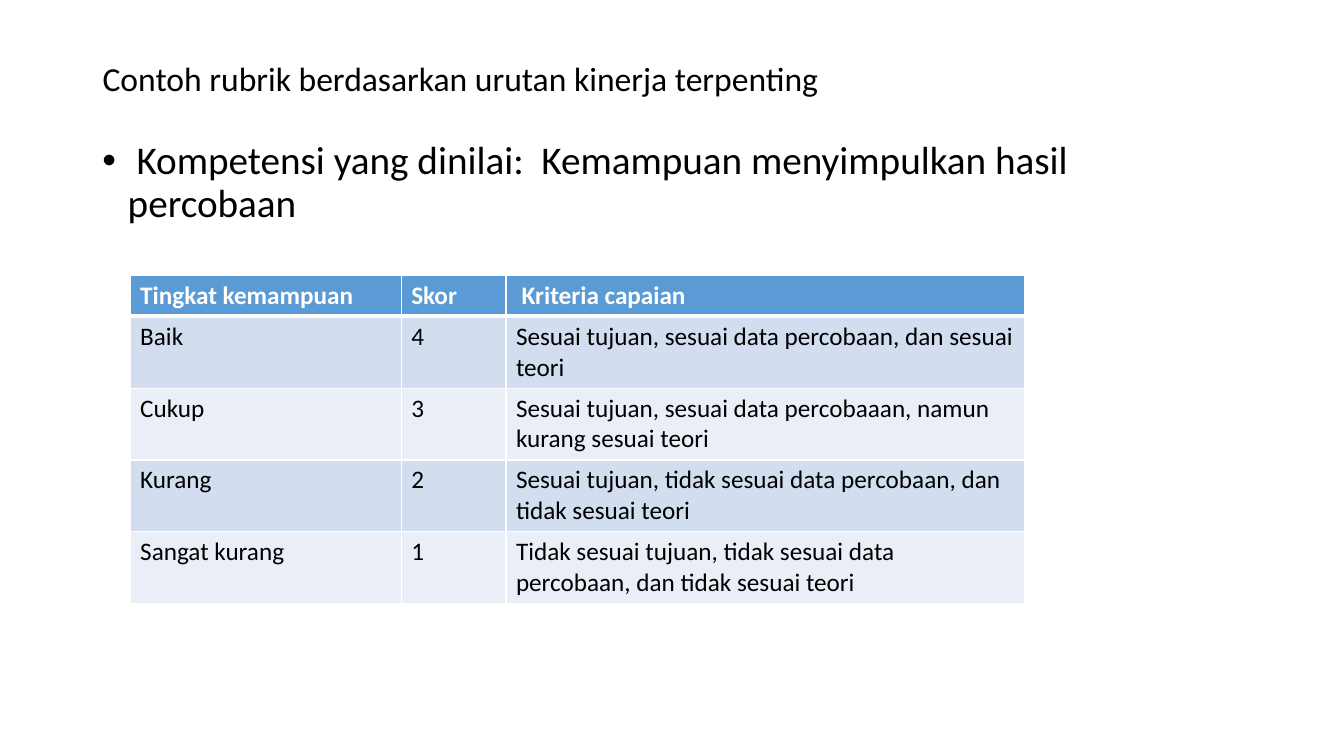
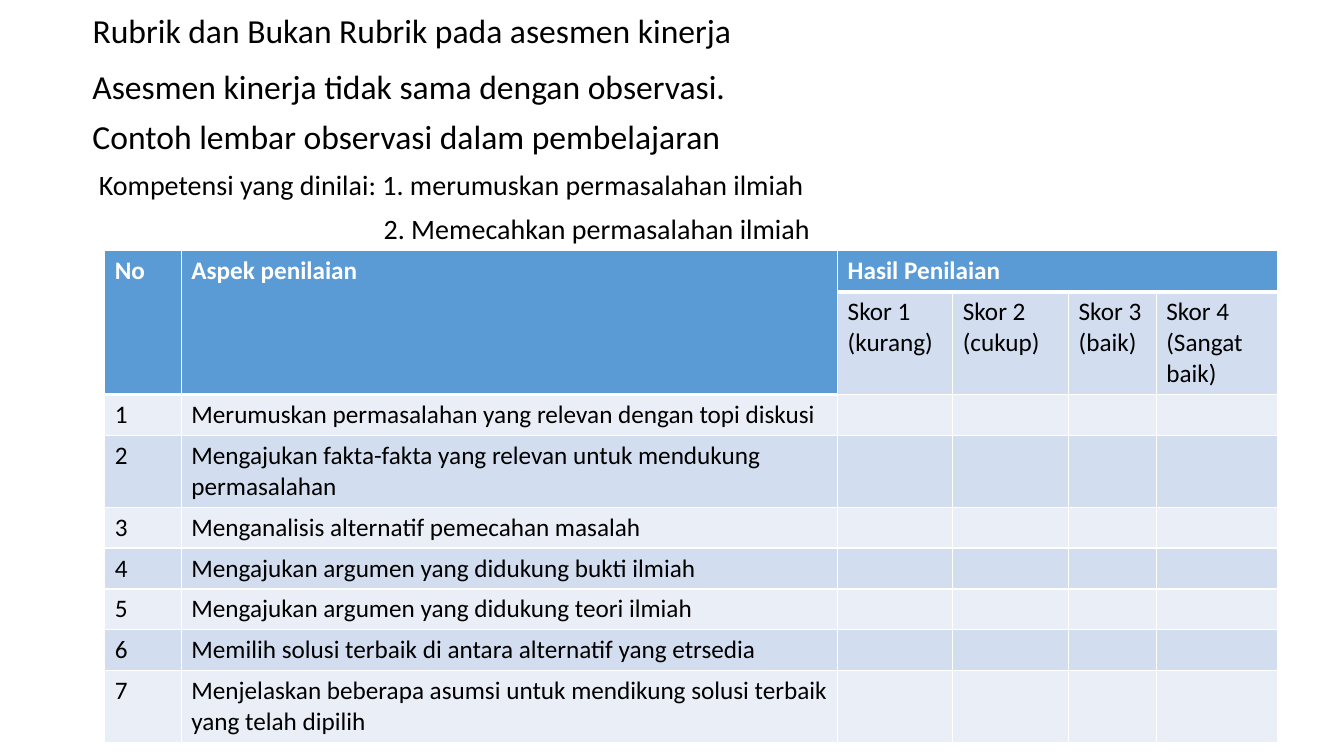
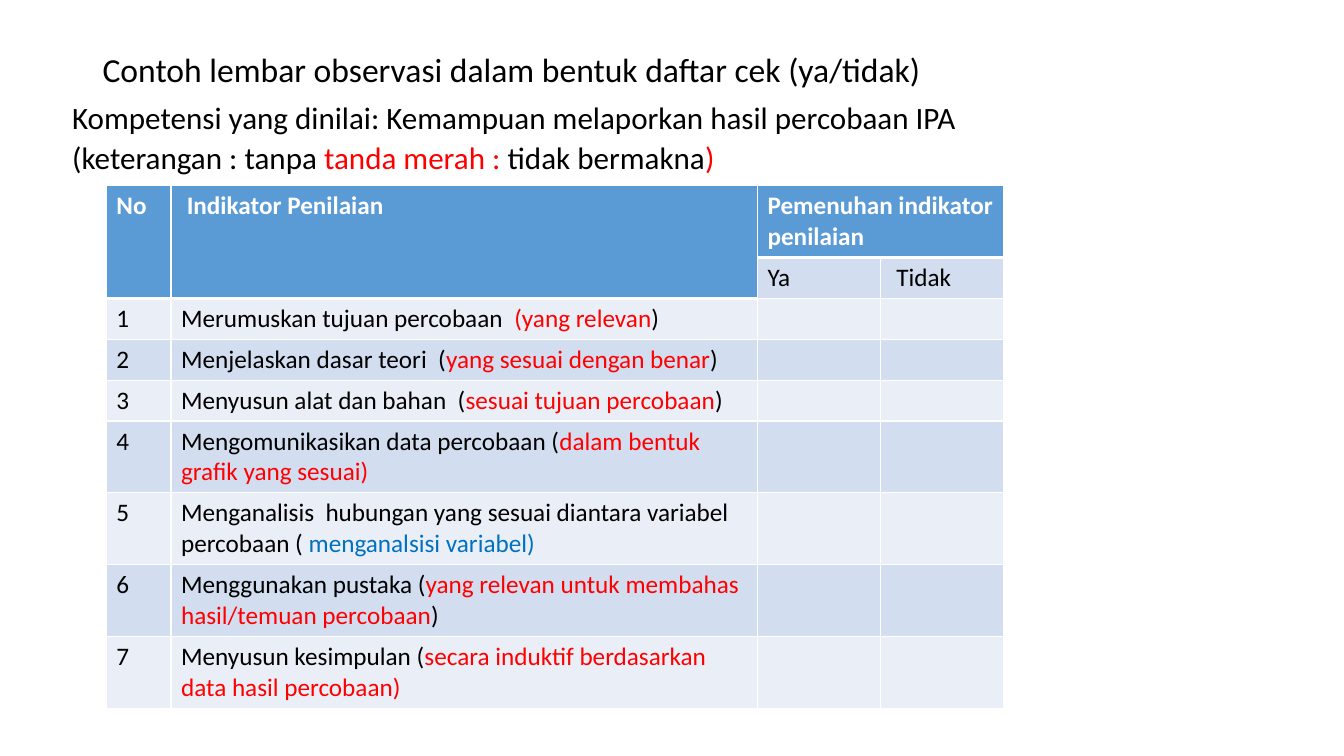
from lxml import etree
from pptx import Presentation
from pptx.dml.color import RGBColor
from pptx.enum.text import MSO_ANCHOR, MSO_AUTO_SIZE, PP_ALIGN
from pptx.oxml.ns import qn
from pptx.util import Cm, Pt

MIDDLE = MSO_ANCHOR.MIDDLE
FIXED = MSO_AUTO_SIZE.NONE
LEFT = PP_ALIGN.LEFT

FONT = "Calibri"
INK = {
    "text": "000000", "white": "FFFFFF", "head": "5B9BD5",
    "dark": "D2DEEF", "light": "EAEFF7", "red": "FF0000", "blue": "0070C0",
}


def write(para, parts, size, ink="text", bold=False):
    """Fill a paragraph from a string or a list of (text, colour) pairs."""
    if isinstance(parts, str):
        parts = [(parts, ink)]
    for text, tone in parts:
        run = para.add_run()
        run.text = text
        run.font.name = FONT
        run.font.size = Pt(size)
        run.font.bold = bold
        run.font.color.rgb = RGBColor.from_string(INK[tone])


def edge(cell, side, width):
    """Draw a white border on one side (L, R, T or B) of a cell."""
    line = etree.SubElement(cell._tc.get_or_add_tcPr(), qn("a:ln" + side), w=str(Pt(width)))
    fill = etree.SubElement(line, qn("a:solidFill"))
    etree.SubElement(fill, qn("a:srgbClr"), val=INK["white"])


levels = [
    ["Tingkat kemampuan", "Skor", " Kriteria capaian"],
    ["Baik", "4", "Sesuai tujuan, sesuai data percobaan, dan sesuai teori"],
    ["Cukup", "3", "Sesuai tujuan, sesuai data percobaaan, namun kurang sesuai teori"],
    ["Kurang", "2", "Sesuai tujuan, tidak sesuai data percobaan, dan tidak sesuai teori"],
    ["Sangat kurang", "1", "Tidak sesuai tujuan, tidak sesuai data percobaan, dan tidak sesuai teori"],
]

aspects = [
    "Merumuskan permasalahan yang relevan dengan topi diskusi",
    "Mengajukan fakta-fakta yang relevan untuk mendukung permasalahan",
    "Menganalisis alternatif pemecahan masalah",
    "Mengajukan argumen yang didukung bukti ilmiah",
    "Mengajukan argumen yang didukung teori ilmiah",
    "Memilih solusi terbaik di antara alternatif yang etrsedia",
    "Menjelaskan beberapa asumsi untuk mendikung solusi terbaik yang telah dipilih",
]
scores = [
    ["No", "Aspek penilaian", "Hasil Penilaian"],
    ["", "", "Skor 1 (kurang)", "Skor 2 (cukup)", "Skor 3 (baik)", "Skor 4 (Sangat baik)"],
] + [[str(n), text] for n, text in enumerate(aspects, 1)]

signs = [
    [("Merumuskan tujuan percobaan  ", "text"), ("(yang relevan", "red"), (")", "text")],
    [("Menjelaskan dasar teori  (", "text"), ("yang sesuai dengan benar", "red"), (")", "text")],
    [("Menyusun alat dan bahan  (", "text"), ("sesuai tujuan percobaan", "red"), (")", "text")],
    [("Mengomunikasikan data percobaan (", "text"), ("dalam bentuk grafik yang sesuai)", "red")],
    [("Menganalisis  hubungan yang sesuai diantara variabel percobaan ( ", "text"),
     ("menganalsisi variabel)", "blue")],
    [("Menggunakan pustaka (", "text"),
     ("yang relevan untuk membahas hasil/temuan percobaan", "red"), (")", "text")],
    [("Menyusun kesimpulan (", "text"),
     ("secara induktif berdasarkan data hasil percobaan)", "red")],
]
checks = [
    ["No", " Indikator Penilaian", "Pemenuhan indikator penilaian"],
    ["", "", "Ya", " Tidak"],
] + [[str(n), text] for n, text in enumerate(signs, 1)]

note = [("(keterangan : tanpa ", "text"), ("tanda merah : ", "red"),
        ("tidak bermakna", "text"), (")", "red")]

# Boxes are left, top, height in cm; body lines are text, size, indent in cm;
# "rows" counts the text lines of each table row.
pages = [
    {
        "title": "Contoh rubrik berdasarkan urutan kinerja terpenting",
        "head": (2.33, 1.01, 2.06), "body": (2.33, 3.43, 2.6), "pitch": 0.9, "bullet": True,
        "lines": [(" Kompetensi yang dinilai:  Kemampuan menyimpulkan hasil percobaan", 28, 0.64)],
        "at": (3.28, 6.94), "cols": [6.83, 2.64, 13.08], "rows": [1, 2, 2, 2, 2],
        "cells": levels, "merge": [],
    },
    {
        "title": "Rubrik dan Bukan Rubrik pada asesmen kinerja",
        "head": (2.08, 0, 1.65), "body": (2.08, 1.65, 4.6), "pitch": 0.9, "bullet": False,
        "lines": [
            ("Asesmen kinerja tidak sama dengan observasi.", 24, 0),
            ("Contoh lembar observasi dalam pembelajaran", 24, 0),
            ("Kompetensi yang dinilai: 1. merumuskan permasalahan ilmiah", 20, 0.16),
            ("2. Memecahkan permasalahan ilmiah", 20, 7.34),
        ],
        "at": (2.64, 6.32), "cols": [1.93, 16.54, 2.9, 2.92, 2.21, 3.05],
        "rows": [1, 3, 1, 2, 1, 1, 1, 1, 2],
        "cells": scores, "merge": [(0, 0, 1, 0), (0, 1, 1, 1), (0, 2, 0, 5)],
    },
    {
        "title": "Contoh lembar observasi dalam bentuk daftar cek (ya/tidak)",
        "head": (2.33, 1.01, 1.6), "body": (1.57, 2.62, 2), "pitch": 0.7, "bullet": False,
        "lines": [
            ("Kompetensi yang dinilai: Kemampuan melaporkan hasil percobaan IPA", 22.2, 0),
            (note, 22.2, 0),
        ],
        "at": (2.68, 4.68), "cols": [1.63, 14.78, 3.1, 3.1],
        "rows": [2, 1, 1, 1, 1, 2, 2, 2, 2],
        "cells": checks, "merge": [(0, 0, 1, 0), (0, 1, 1, 1), (0, 2, 0, 3)],
    },
]

WIDTH = Cm(29.21)
deck = Presentation()
deck.slide_width, deck.slide_height = Cm(33.87), Cm(19.05)

for page in pages:
    slide = deck.slides.add_slide(deck.slide_layouts[5])

    title = slide.shapes.title
    left, top, height = map(Cm, page["head"])
    title.left, title.top, title.width, title.height = left, top, WIDTH, height
    frame = title.text_frame
    frame.auto_size, frame.vertical_anchor = FIXED, MIDDLE
    para = frame.paragraphs[0]
    para.alignment, para.line_spacing = LEFT, 0.9
    write(para, page["title"], 24)

    left, top, height = map(Cm, page["body"])
    frame = slide.shapes.add_textbox(left, top, WIDTH, height).text_frame
    frame.word_wrap = True
    for n, (text, size, indent) in enumerate(page["lines"]):
        para = frame.add_paragraph() if n else frame.paragraphs[0]
        para.line_spacing = page["pitch"]
        if n:
            para.space_before = Pt(10)
        props = para._p.get_or_add_pPr()
        props.set("marL", str(Cm(indent)))
        if page["bullet"]:
            props.set("indent", str(-Cm(indent)))
            etree.SubElement(props, qn("a:buFont"), typeface="Arial")
            etree.SubElement(props, qn("a:buChar"), char="•")
        write(para, text, size)

    left, top = map(Cm, page["at"])
    cols = page["cols"]
    highs = [Cm(0.25 + 0.78 * count) for count in page["rows"]]
    table = slide.shapes.add_table(
        len(highs), len(cols), left, top, Cm(sum(cols)), sum(highs)).table
    for col, width in zip(table.columns, cols):
        col.width = Cm(width)
    for row, high in zip(table.rows, highs):
        row.height = high
    for r1, c1, r2, c2 in page["merge"]:
        table.cell(r1, c1).merge(table.cell(r2, c2))

    for r, texts in enumerate(page["cells"]):
        for c in range(len(cols)):
            cell = table.cell(r, c)
            head = r == 0 or cell.is_spanned
            edge(cell, "L", 1)
            edge(cell, "R", 1)
            if r == 0:
                edge(cell, "T", 1)
            edge(cell, "B", 3 if head else 1)
            tone = "head" if head else "dark" if r % 2 else "light"
            cell.fill.solid()
            cell.fill.fore_color.rgb = RGBColor.from_string(INK[tone])
            if c < len(texts) and texts[c]:
                write(cell.text_frame.paragraphs[0], texts[c], 18,
                      "white" if head else "text", head)

deck.save("out.pptx")
